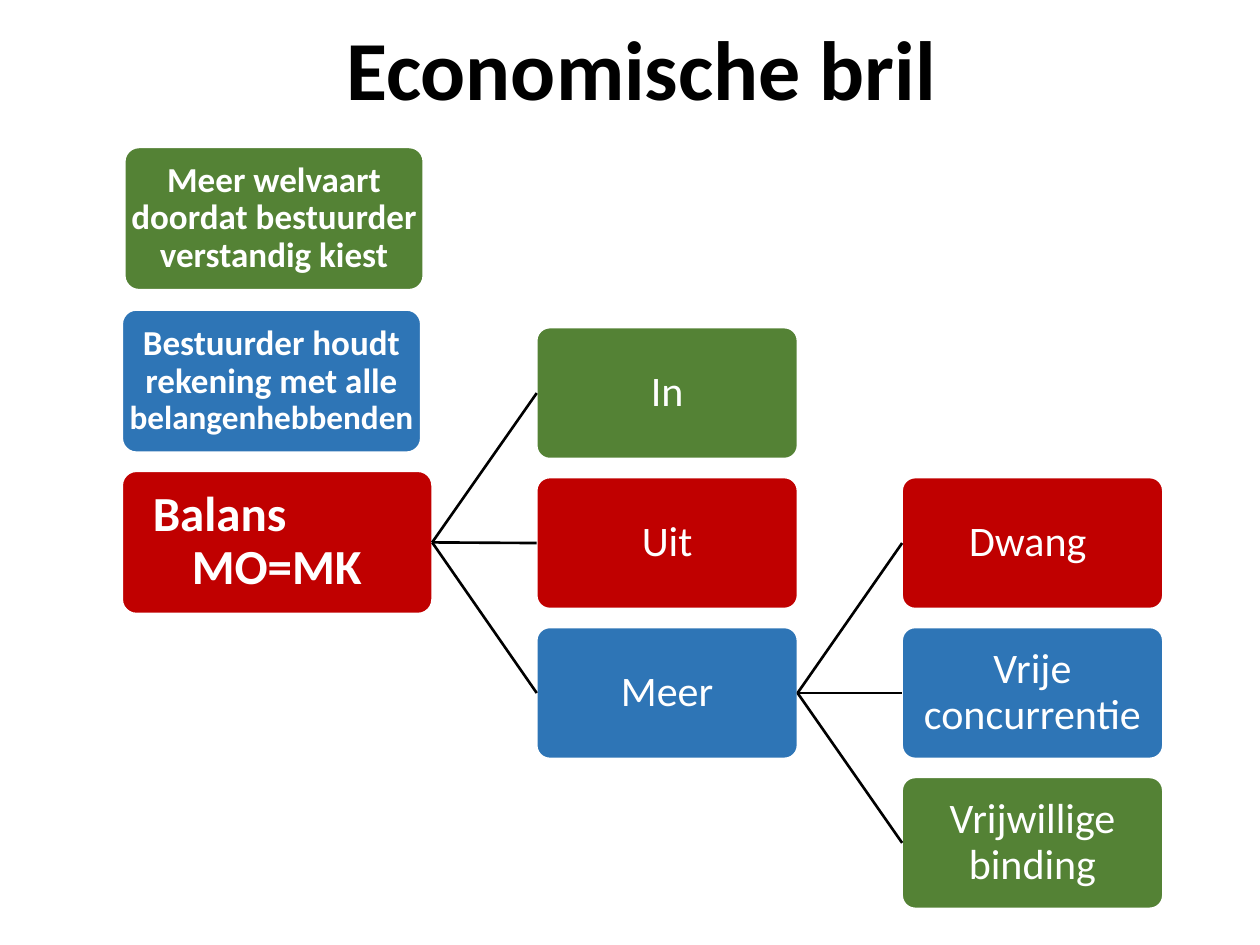
from lxml import etree
from pptx import Presentation
from pptx.dml.color import RGBColor
from pptx.enum.shapes import MSO_CONNECTOR, MSO_SHAPE
from pptx.enum.text import MSO_ANCHOR, PP_ALIGN
from pptx.oxml.ns import qn
from pptx.util import Inches, Pt

STRAIGHT = MSO_CONNECTOR.STRAIGHT
ROUNDED = MSO_SHAPE.ROUNDED_RECTANGLE
MIDDLE, BOTTOM = MSO_ANCHOR.MIDDLE, MSO_ANCHOR.BOTTOM
LEFT, CENTER = PP_ALIGN.LEFT, PP_ALIGN.CENTER
LEFT_SIDE, RIGHT_SIDE = 1, 3

COLORS = {"green": "548235", "blue": "2E75B6", "red": "C00000",
          "white": "FFFFFF", "black": "000000"}
FONT = "Calibri"


def color(name):
    return RGBColor.from_string(COLORS[name])


def write_text(shape, runs, bold=False, font_color="white", align=CENTER,
               anchor=MIDDLE, insets=(0.02, 0.02, 0.02, 0.02), hanging=None):
    """Write (text, size) runs; hanging is a (margin, first-line indent) pair."""
    frame = shape.text_frame
    frame.word_wrap = True
    frame.vertical_anchor = anchor
    (frame.margin_left, frame.margin_top,
     frame.margin_right, frame.margin_bottom) = map(Inches, insets)
    paragraph = frame.paragraphs[0]
    paragraph.alignment = align
    paragraph.line_spacing = 0.9
    if hanging:
        properties = paragraph._p.get_or_add_pPr()
        for key, length in zip(("marL", "indent"), hanging):
            properties.set(key, str(Inches(length)))
    for position, (text, size) in enumerate(runs):
        for number, line in enumerate(text.split("\n")):
            if number:
                paragraph.add_line_break()
            run = paragraph.add_run()
            run.text = line
            run.font.name = FONT
            run.font.size = Pt(size)
            run.font.bold = bold
            run.font.color.rgb = color(font_color)


class DiagramSlide:
    """Holds the slide and the look of its boxes and links."""

    def __init__(self, slide):
        self.shapes = slide.shapes
        self.corner = 0.1
        self.border_width = Pt(1)
        self.link_width = Pt(1.5)

    def title(self, text, left, top, width, height):
        box = self.shapes.add_textbox(*map(Inches, (left, top, width, height)))
        write_text(box, [(text, 48)], bold=True, font_color="black",
                   anchor=BOTTOM, insets=(0.07, 0.04, 0.39, 0.04))

    def box(self, runs, fill, left, top, width, height, **text_format):
        shape = self.shapes.add_shape(
            ROUNDED, *map(Inches, (left, top, width, height)))
        shape.adjustments[0] = self.corner
        shape.shadow.inherit = False
        shape.fill.solid()
        shape.fill.fore_color.rgb = color(fill)
        shape.line.color.rgb = color("white")
        shape.line.width = self.border_width
        write_text(shape, runs, **text_format)
        return shape

    def column(self, items, left, top):
        """Stack equal boxes downwards and return them."""
        width, height, pitch = 2.07, 1.04, 1.19
        return [self.box([(text, 24)], fill, left, top + row * pitch, width, height)
                for row, (text, fill) in enumerate(items)]

    def links(self, parent, children):
        for child in children:
            connector = self.shapes.add_connector(STRAIGHT, 0, 0, 0, 0)
            connector.begin_connect(parent, RIGHT_SIDE)
            connector.end_connect(child, LEFT_SIDE)
            connector.line.color.rgb = color("black")
            connector.line.width = self.link_width
            etree.SubElement(connector._element.spPr, qn("a:effectLst"))


def main():
    presentation = Presentation()
    presentation.slide_width = Inches(10)
    presentation.slide_height = Inches(7.5)
    diagram = DiagramSlide(presentation.slides.add_slide(presentation.slide_layouts[6]))

    tight = (0.01, 0.01, 0.01, 0.01)
    diagram.box([("Meer welvaart doordat bestuurder verstandig kiest", 20)], "green",
                0.99, 1.17, 2.37, 1.13, bold=True, insets=tight)
    diagram.box([("Bestuurder houdt rekening met alle ", 20), ("belangenhebbenden ", 19)],
                "blue", 0.97, 2.46, 2.37, 1.13, bold=True, insets=tight)
    balance = diagram.box([("Balans\nMO=MK", 28)], "red", 0.97, 3.74, 2.46, 1.13,
                          bold=True, align=LEFT, hanging=(0.5, -0.31))

    choices = diagram.column([("In", "green"), ("Uit", "red"), ("Meer", "blue")],
                             4.26, 2.6)
    outcomes = diagram.column([("Dwang ", "red"), ("Vrije concurrentie", "blue"),
                               ("Vrijwillige binding", "green")], 7.16, 3.79)
    diagram.links(balance, choices)
    diagram.links(choices[-1], outcomes)
    diagram.title("Economische bril", 0.94, -0.11, 8.62, 1.09)

    presentation.save("out.pptx")


if __name__ == "__main__":
    main()
